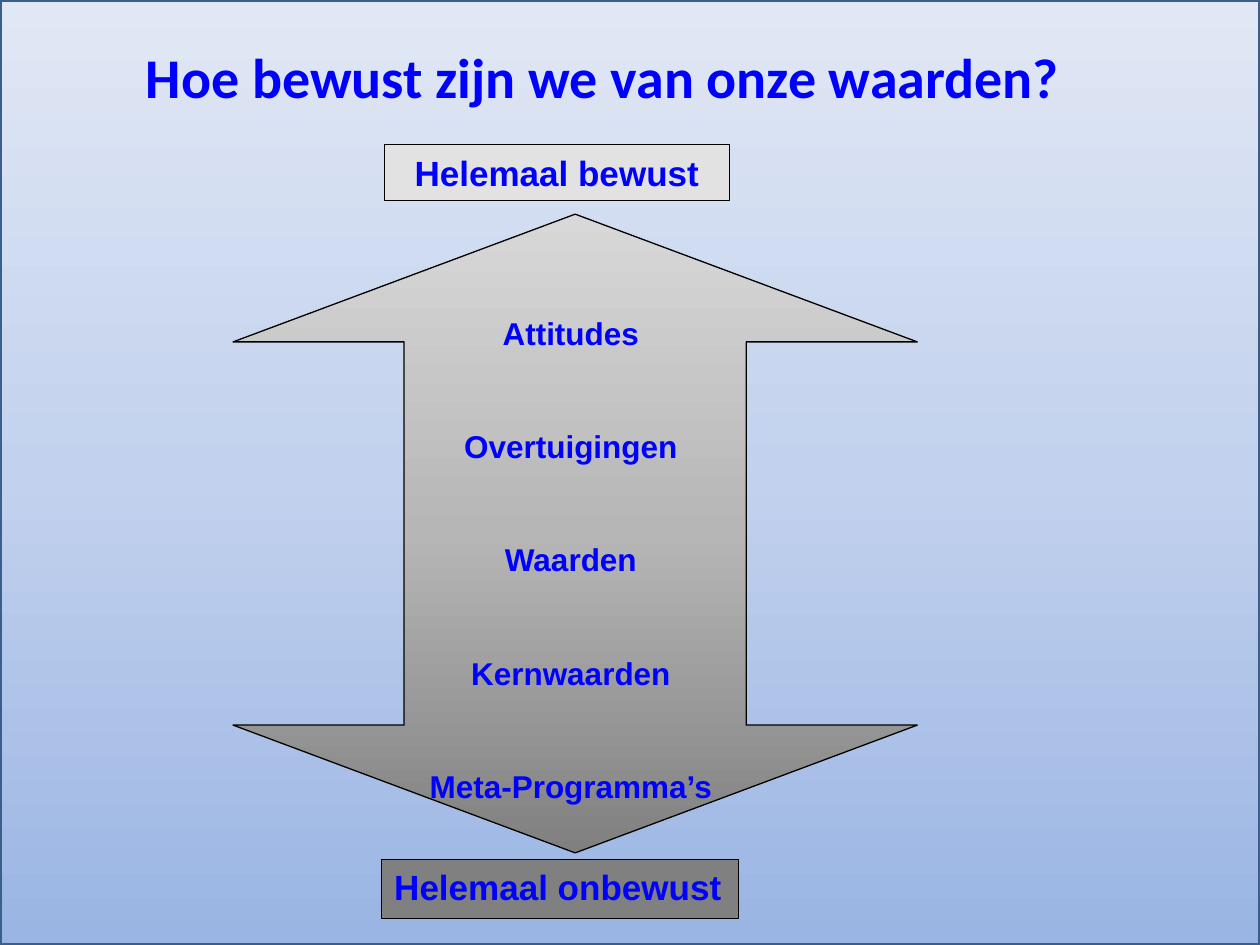
from copy import deepcopy
from dataclasses import dataclass

from lxml import etree
from pptx import Presentation
from pptx.dml.color import RGBColor
from pptx.enum.shapes import MSO_SHAPE
from pptx.enum.text import MSO_ANCHOR, MSO_AUTO_SIZE, PP_ALIGN
from pptx.oxml.ns import qn
from pptx.util import Pt

RECTANGLE = MSO_SHAPE.RECTANGLE
DOUBLE_ARROW = MSO_SHAPE.UP_DOWN_ARROW
LEFT, CENTER = PP_ALIGN.LEFT, PP_ALIGN.CENTER
TOP, MIDDLE = MSO_ANCHOR.TOP, MSO_ANCHOR.MIDDLE
GROW = MSO_AUTO_SIZE.SHAPE_TO_FIT_TEXT


@dataclass(frozen=True)
class Theme:
    text: str = "0000FF"
    outline: str = "000000"
    frame: str = "3A5F8C"
    conscious: str = "E2E2E2"
    unconscious: str = "808080"
    sky: tuple = ("9AB5E4", "C2D1ED", "E1E8F5")
    greys: tuple = ("808080", "B6B6B6", "D8D8D8")
    title_font: str = "Calibri"
    body_font: str = "Arial"
    title_size: float = 32
    label_size: float = 20
    level_size: float = 18


THEME = Theme()
WIDTH, HEIGHT = 720, 540
LEVELS = ["Attitudes", "Overtuigingen", "Waarden", "Kernwaarden", "Meta-Programma’s"]


def write_text(shape, lines, *, size, font=THEME.body_font, align=LEFT,
               anchor=TOP, line_spacing=1.0):
    frame = shape.text_frame
    frame.word_wrap = True
    frame.vertical_anchor = anchor
    for index, line in enumerate(lines):
        paragraph = frame.add_paragraph() if index else frame.paragraphs[0]
        paragraph.alignment = align
        paragraph.line_spacing = line_spacing
        run = paragraph.add_run()
        run.text = line
        run.font.name = font
        run.font.size = Pt(size)
        run.font.bold = True
        run.font.color.rgb = RGBColor.from_string(THEME.text)


def fill_upward(shape, colors):
    """Fill with evenly spaced colours, from the bottom edge to the top."""
    shape.fill.gradient()
    shape.fill.gradient_angle = 90
    stop_list = shape.fill._xPr.find(qn("a:gradFill")).find(qn("a:gsLst"))
    for _ in range(len(colors) - len(stop_list)):
        stop_list.insert(1, deepcopy(stop_list[0]))
    for index, (stop, color) in enumerate(zip(shape.fill.gradient_stops, colors)):
        stop.position = index / (len(colors) - 1)
        stop.color.rgb = RGBColor.from_string(color)


def set_arrow_proportions(arrow, shaft, head):
    """Write both guides by name, as python-pptx misnames those of this arrow."""
    guides = arrow._element.spPr.find(qn("a:prstGeom")).find(qn("a:avLst"))
    for guide in list(guides):
        guides.remove(guide)
    for name, share in (("adj1", shaft), ("adj2", head)):
        etree.SubElement(guides, qn("a:gd"), name=name, fmla=f"val {round(share * 100000)}")


def add_outlined_shape(slide, kind, box, fill, line=THEME.outline, line_width=0.75):
    shape = slide.shapes.add_shape(kind, *map(Pt, box))
    shape.shadow.inherit = False
    if isinstance(fill, str):
        shape.fill.solid()
        shape.fill.fore_color.rgb = RGBColor.from_string(fill)
    else:
        fill_upward(shape, fill)
    shape.line.color.rgb = RGBColor.from_string(line)
    shape.line.width = Pt(line_width)
    return shape


def add_text_box(slide, box, lines, **text_format):
    text_box = slide.shapes.add_textbox(*map(Pt, box))
    write_text(text_box, lines, **text_format)
    text_box.text_frame.auto_size = GROW


def add_label(slide, box, text, fill, align):
    label = add_outlined_shape(slide, RECTANGLE, box, fill)
    write_text(label, [text], size=THEME.label_size, align=align)


def add_awareness_scale(slide, box):
    """Double arrow with a label at each end and the levels along its shaft."""
    left, top, width, height = box
    arrow = add_outlined_shape(slide, DOUBLE_ARROW, box, THEME.greys)
    set_arrow_proportions(arrow, shaft=0.5, head=0.2)
    add_label(slide, (left + 86.4, top - 39.6, 197.3, 31.7),
              "Helemaal bewust", THEME.conscious, CENTER)
    add_label(slide, (left + 85, top + height + 3.6, 203.8, 33.8),
              "Helemaal onbewust", THEME.unconscious, LEFT)
    add_text_box(slide, (left + 96.5, top + 8.6, 193, 334), LEVELS,
                 size=THEME.level_size, align=CENTER, anchor=MIDDLE, line_spacing=3.0)


def build_slide(presentation):
    slide = presentation.slides.add_slide(presentation.slide_layouts[6])
    add_outlined_shape(slide, RECTANGLE, (0, 0, WIDTH, HEIGHT), THEME.sky,
                       line=THEME.frame, line_width=2)
    add_awareness_scale(slide, (133.2, 122.4, 391, 365))
    add_text_box(slide, (76.3, 20.9, 595.4, 46), ["Hoe bewust zijn we van onze waarden?"],
                 size=THEME.title_size, font=THEME.title_font)


def main():
    presentation = Presentation()
    presentation.slide_width, presentation.slide_height = Pt(WIDTH), Pt(HEIGHT)
    build_slide(presentation)
    presentation.save("out.pptx")


if __name__ == "__main__":
    main()
